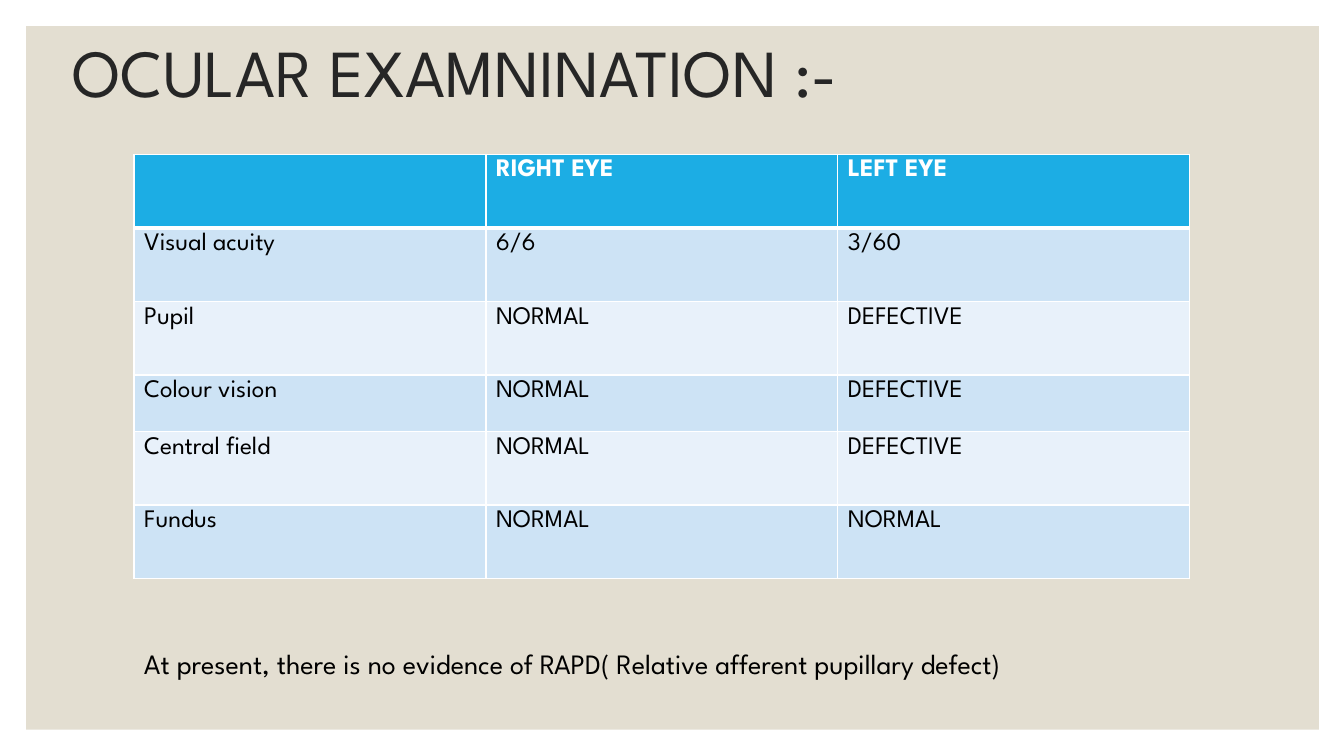
from lxml.etree import SubElement
from pptx import Presentation
from pptx.dml.color import RGBColor
from pptx.enum.shapes import MSO_SHAPE as Shape
from pptx.enum.text import MSO_ANCHOR as Anchor, MSO_AUTO_SIZE as AutoSize, PP_ALIGN as Align
from pptx.oxml.ns import qn
from pptx.util import Emu, Pt

COLORS = {
    "panel": "E3DED1",
    "title": "262626",
    "text": "000000",
    "white": "FFFFFF",
    "header": "1CADE4",
    "odd": "CDE3F5",
    "even": "E8F1FA",
}
EXAMINATION = [
    ["", "RIGHT EYE", "LEFT EYE"],
    ["Visual acuity", "6/6", "3/60"],
    ["Pupil", "NORMAL", "DEFECTIVE"],
    ["Colour vision", "NORMAL", "DEFECTIVE"],
    ["Central field", "NORMAL", "DEFECTIVE"],
    ["Fundus", "NORMAL", "NORMAL"],
]
ROW_HEIGHTS = [73, 73, 73, 56, 73, 73]
COLUMN_WIDTH = 349


def px(length):
    return Emu(length * 9144)


def color(name):
    return RGBColor.from_string(COLORS[name])


class SlideBuilder:
    font_name = "League Spartan"

    def __init__(self, presentation):
        self.slide = presentation.slides.add_slide(presentation.slide_layouts[5])

    def place(self, shape, left, top, width, height):
        shape.left, shape.top = px(left), px(top)
        shape.width, shape.height = px(width), px(height)

    def set_text(self, frame, text, size, color_name, bold=False):
        frame.text = text
        paragraph = frame.paragraphs[0]
        paragraph.alignment = Align.LEFT
        font = paragraph.font
        font.name, font.size, font.bold = self.font_name, Pt(size), bold
        font.color.rgb = color(color_name)
        return paragraph

    def panel(self, *box):
        shape = self.slide.shapes.add_shape(Shape.RECTANGLE, *map(px, box))
        shape.shadow.inherit = False
        shape.fill.solid()
        shape.fill.fore_color.rgb = color("panel")
        shape.line.fill.background()
        tree = self.slide.shapes.element
        tree.remove(shape.element)
        tree.insert(2, shape.element)

    def title(self, text, *box):
        title = self.slide.shapes.title
        self.place(title, *box)
        frame = title.text_frame
        paragraph = self.set_text(frame, text, 48, "title")
        paragraph.line_spacing = 0.9
        frame.vertical_anchor = Anchor.MIDDLE
        frame.auto_size = AutoSize.NONE
        frame.word_wrap = True

    def note(self, text, *box):
        frame = self.slide.shapes.add_textbox(*map(px, box)).text_frame
        frame.word_wrap = True
        self.set_text(frame, text, 20, "text")

    def borders(self, cell, top, bottom):
        properties = cell._tc.get_or_add_tcPr()
        for side, points in zip("LRTB", (1, 1, top, bottom)):
            line = SubElement(properties, qn(f"a:ln{side}"), w=str(Pt(points)))
            fill = SubElement(line, qn("a:solidFill"))
            SubElement(fill, qn("a:srgbClr"), val=COLORS["white"])

    def table(self, rows, heights, column_width, left, top):
        columns = len(rows[0])
        table = self.slide.shapes.add_table(
            len(rows), columns, px(left), px(top),
            px(column_width * columns), px(sum(heights))).table
        for column in table.columns:
            column.width = px(column_width)
        for index, (texts, height) in enumerate(zip(rows, heights)):
            table.rows[index].height = px(height)
            header = index == 0
            fill_name = "header" if header else "odd" if index % 2 else "even"
            for cell, text in zip(table.rows[index].cells, texts):
                self.set_text(cell.text_frame, text, 18, "white" if header else "text", header)
                self.borders(cell, 3 if index == 1 else 1, 3 if header else 1)
                cell.fill.solid()
                cell.fill.fore_color.rgb = color(fill_name)


def main():
    presentation = Presentation()
    presentation.slide_width, presentation.slide_height = px(1333), px(750)
    builder = SlideBuilder(presentation)
    builder.panel(26, 26, 1282, 698)
    builder.title("OCULAR EXAMNINATION :-", 62, 0, 1100, 150)
    builder.table(EXAMINATION, ROW_HEIGHTS, COLUMN_WIDTH, 133, 153)
    builder.note("At present, there is no evidence of RAPD( Relative afferent pupillary defect)",
                 133, 636, 1046, 44)
    presentation.save("out.pptx")


if __name__ == "__main__":
    main()
